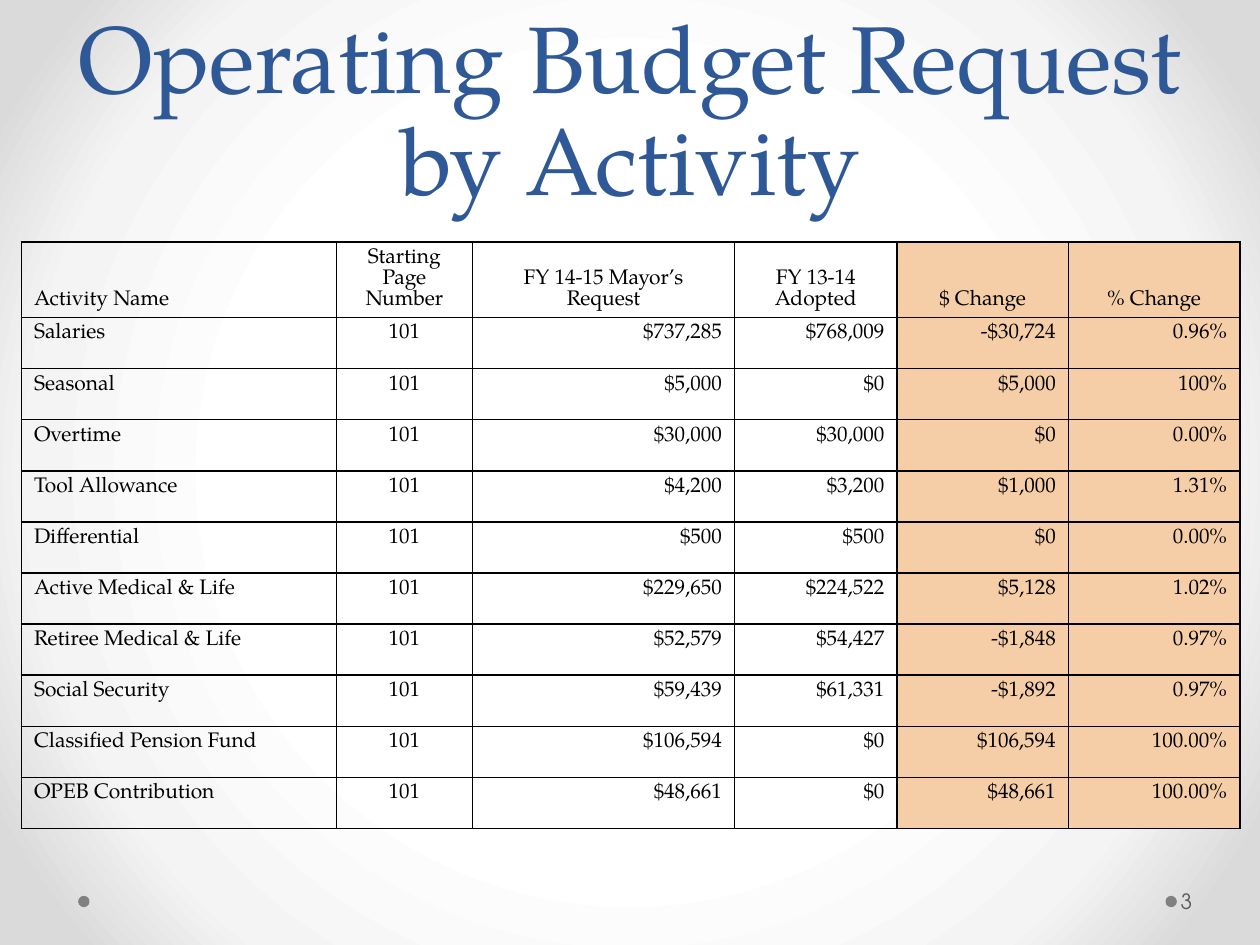
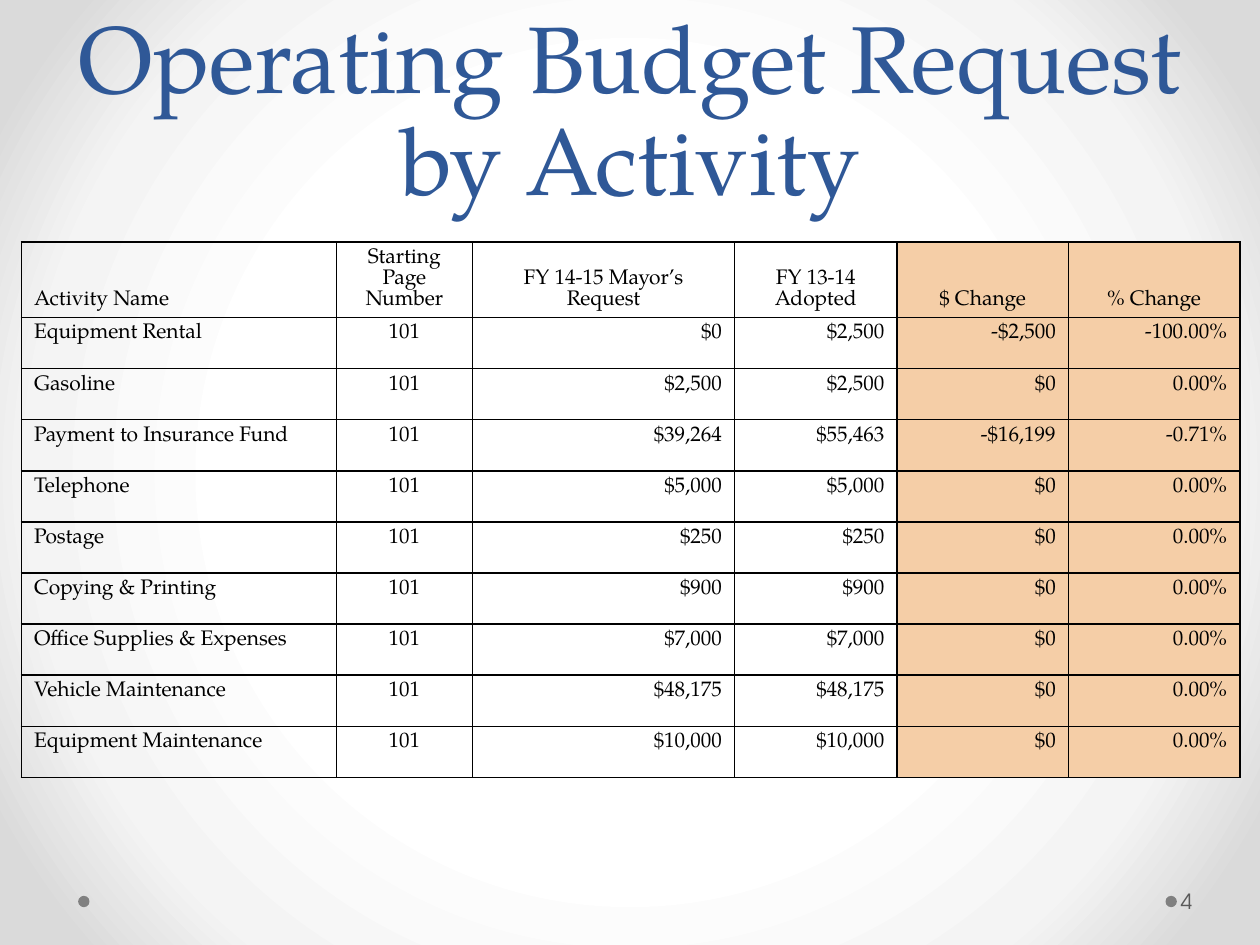
from lxml import etree
from pptx import Presentation
from pptx.dml.color import RGBColor
from pptx.enum.shapes import MSO_SHAPE
from pptx.enum.text import MSO_ANCHOR, PP_ALIGN
from pptx.oxml.ns import qn
from pptx.util import Inches, Pt

LEFT, CENTER, RIGHT = PP_ALIGN.LEFT, PP_ALIGN.CENTER, PP_ALIGN.RIGHT
TOP, MIDDLE, BOTTOM = MSO_ANCHOR.TOP, MSO_ANCHOR.MIDDLE, MSO_ANCHOR.BOTTOM
OVAL = MSO_SHAPE.OVAL

TITLE_BLUE = RGBColor(0x2F, 0x58, 0x97)
CHANGE_FILL = RGBColor(0xF5, 0xCE, 0xA7)
BLACK = RGBColor(0x00, 0x00, 0x00)
DOT_GRAY = RGBColor(0x80, 0x80, 0x80)
NUMBER_GRAY = RGBColor(0x59, 0x59, 0x59)
BACKGROUND_STOPS = (
    (50, RGBColor(0xFF, 0xFF, 0xFF)),
    (76, RGBColor(0xF4, 0xF4, 0xF4)),
    (92, RGBColor(0xDA, 0xDA, 0xDA)),
)

SERIF = "TeX Gyre Pagella"
SANS = "TeX Gyre Adventor"

SLIDE_WIDTH, SLIDE_HEIGHT = Inches(10), Inches(7.5)
MARGIN = Inches(0.5)
TITLE_HEIGHT = Inches(1.75)
TABLE_LEFT, TABLE_TOP = Inches(0.17), Inches(1.92)
COLUMN_WIDTHS = [Inches(width) for width in (2.5, 1.08, 2.08, 1.29, 1.36, 1.36)]
HEADER_HEIGHT, ROW_HEIGHT = Inches(0.6), Pt(29.2)
DOT_SIZE, DOT_TOP = Inches(0.09), Inches(7.11)
DOT_LEFTS = (Inches(0.62), Inches(9.25))

TITLE = "Operating Budget Request by Activity"
HEADERS = ("Activity Name", "Starting Page Number", "FY 14-15 Mayor’s Request",
           "FY 13-14 Adopted", "$ Change", "% Change")
HEADER_ALIGNMENTS = (LEFT,) + (CENTER,) * 5
BODY_ALIGNMENTS = (LEFT, CENTER) + (RIGHT,) * 4
FIRST_CHANGE_COLUMN = HEADERS.index("$ Change")
STARTING_PAGE = "101"

STAFF_ACTIVITIES = (
    ("Salaries", "$737,285", "$768,009", "-$30,724", "0.96%"),
    ("Seasonal", "$5,000", "$0", "$5,000", "100%"),
    ("Overtime", "$30,000", "$30,000", "$0", "0.00%"),
    ("Tool Allowance", "$4,200", "$3,200", "$1,000", "1.31%"),
    ("Differential", "$500", "$500", "$0", "0.00%"),
    ("Active Medical & Life", "$229,650", "$224,522", "$5,128", "1.02%"),
    ("Retiree Medical & Life", "$52,579", "$54,427", "-$1,848", "0.97%"),
    ("Social Security", "$59,439", "$61,331", "-$1,892", "0.97%"),
    ("Classified Pension Fund", "$106,594", "$0", "$106,594", "100.00%"),
    ("OPEB Contribution", "$48,661", "$0", "$48,661", "100.00%"),
)
OPERATING_ACTIVITIES = (
    ("Equipment Rental", "$0", "$2,500", "-$2,500", "-100.00%"),
    ("Gasoline", "$2,500", "$2,500", "$0", "0.00%"),
    ("Payment to Insurance Fund", "$39,264", "$55,463", "-$16,199", "-0.71%"),
    ("Telephone", "$5,000", "$5,000", "$0", "0.00%"),
    ("Postage", "$250", "$250", "$0", "0.00%"),
    ("Copying & Printing", "$900", "$900", "$0", "0.00%"),
    ("Office Supplies & Expenses", "$7,000", "$7,000", "$0", "0.00%"),
    ("Vehicle Maintenance", "$48,175", "$48,175", "$0", "0.00%"),
    ("Equipment Maintenance", "$10,000", "$10,000", "$0", "0.00%"),
)
SLIDE_ACTIVITIES = {3: STAFF_ACTIVITIES, 4: OPERATING_ACTIVITIES}


def add_color(parent, color):
    """Append an RGB colour element to an XML parent."""
    etree.SubElement(parent, qn("a:srgbClr"), val=str(color))


def set_background(master):
    """Give the slide master a circular gradient that darkens outwards."""
    master.background.fill.gradient()
    gradient = next(master.element.iter(qn("a:gradFill")))
    for child in list(gradient):
        gradient.remove(child)
    stops = etree.SubElement(gradient, qn("a:gsLst"))
    for position, color in BACKGROUND_STOPS:
        add_color(etree.SubElement(stops, qn("a:gs"), pos=str(position * 1000)), color)
    circle = etree.SubElement(gradient, qn("a:path"), path="circle")
    etree.SubElement(circle, qn("a:fillToRect"), l="50000", t="50000", r="50000", b="50000")


def write_text(text_frame, text, font_name, size, color, alignment=LEFT, line_spacing=None):
    """Fill a text frame with one styled paragraph."""
    text_frame.word_wrap = True
    paragraph = text_frame.paragraphs[0]
    paragraph.text = text
    paragraph.alignment = alignment
    paragraph.line_spacing = line_spacing
    paragraph.font.name = font_name
    paragraph.font.size = Pt(size)
    paragraph.font.color.rgb = color


def add_title(slide):
    """Add the large centred title."""
    box = slide.shapes.add_textbox(MARGIN, 0, SLIDE_WIDTH - 2 * MARGIN, TITLE_HEIGHT)
    box.text_frame.vertical_anchor = BOTTOM
    write_text(box.text_frame, TITLE, SERIF, 54, TITLE_BLUE, CENTER, Pt(58))


def add_footer(slide, number):
    """Add the two footer dots and the slide number."""
    for left in DOT_LEFTS:
        dot = slide.shapes.add_shape(OVAL, left, DOT_TOP, DOT_SIZE, DOT_SIZE)
        dot.shadow.inherit = False
        dot.fill.solid()
        dot.fill.fore_color.rgb = DOT_GRAY
        dot.line.fill.background()
    box = slide.shapes.add_textbox(Inches(9.34), Inches(6.95), Inches(0.61), Inches(0.4))
    box.text_frame.margin_left = Inches(0.03)
    box.text_frame.margin_right = Inches(0.05)
    box.text_frame.vertical_anchor = MIDDLE
    write_text(box.text_frame, str(number), SANS, 12, NUMBER_GRAY)


def set_borders(cell):
    """Draw a thin black line on every side of a cell."""
    properties = cell._tc.get_or_add_tcPr()
    for side in ("a:lnL", "a:lnR", "a:lnT", "a:lnB"):
        line = etree.SubElement(properties, qn(side), w=str(Pt(1)))
        add_color(etree.SubElement(line, qn("a:solidFill")), BLACK)


def style_cell(cell, text, alignment, anchor, is_change):
    """Write one table cell, tinted when it reports a change."""
    set_borders(cell)
    if is_change:
        cell.fill.solid()
        cell.fill.fore_color.rgb = CHANGE_FILL
    else:
        cell.fill.background()
    cell.vertical_anchor = anchor
    write_text(cell.text_frame, text, SERIF, 12, BLACK, alignment, Pt(12))


def add_budget_table(slide, activities):
    """Add the budget table with one row for each activity."""
    rows = [HEADERS] + [(name, STARTING_PAGE, *amounts) for name, *amounts in activities]
    height = HEADER_HEIGHT + ROW_HEIGHT * len(activities)
    table = slide.shapes.add_table(len(rows), len(HEADERS), TABLE_LEFT, TABLE_TOP,
                                   sum(COLUMN_WIDTHS), height).table
    table.first_row = table.horz_banding = False
    for column, width in zip(table.columns, COLUMN_WIDTHS):
        column.width = width
    for row_index, values in enumerate(rows):
        is_header = row_index == 0
        table.rows[row_index].height = HEADER_HEIGHT if is_header else ROW_HEIGHT
        alignments = HEADER_ALIGNMENTS if is_header else BODY_ALIGNMENTS
        anchor = BOTTOM if is_header else TOP
        for column_index, (text, alignment) in enumerate(zip(values, alignments)):
            style_cell(table.cell(row_index, column_index), text, alignment, anchor,
                       column_index >= FIRST_CHANGE_COLUMN)


def main():
    """Build the budget slides and save them."""
    presentation = Presentation()
    presentation.slide_width, presentation.slide_height = SLIDE_WIDTH, SLIDE_HEIGHT
    set_background(presentation.slide_master)
    for number, activities in SLIDE_ACTIVITIES.items():
        slide = presentation.slides.add_slide(presentation.slide_layouts[6])
        add_title(slide)
        add_budget_table(slide, activities)
        add_footer(slide, number)
    presentation.save("out.pptx")


if __name__ == "__main__":
    main()
